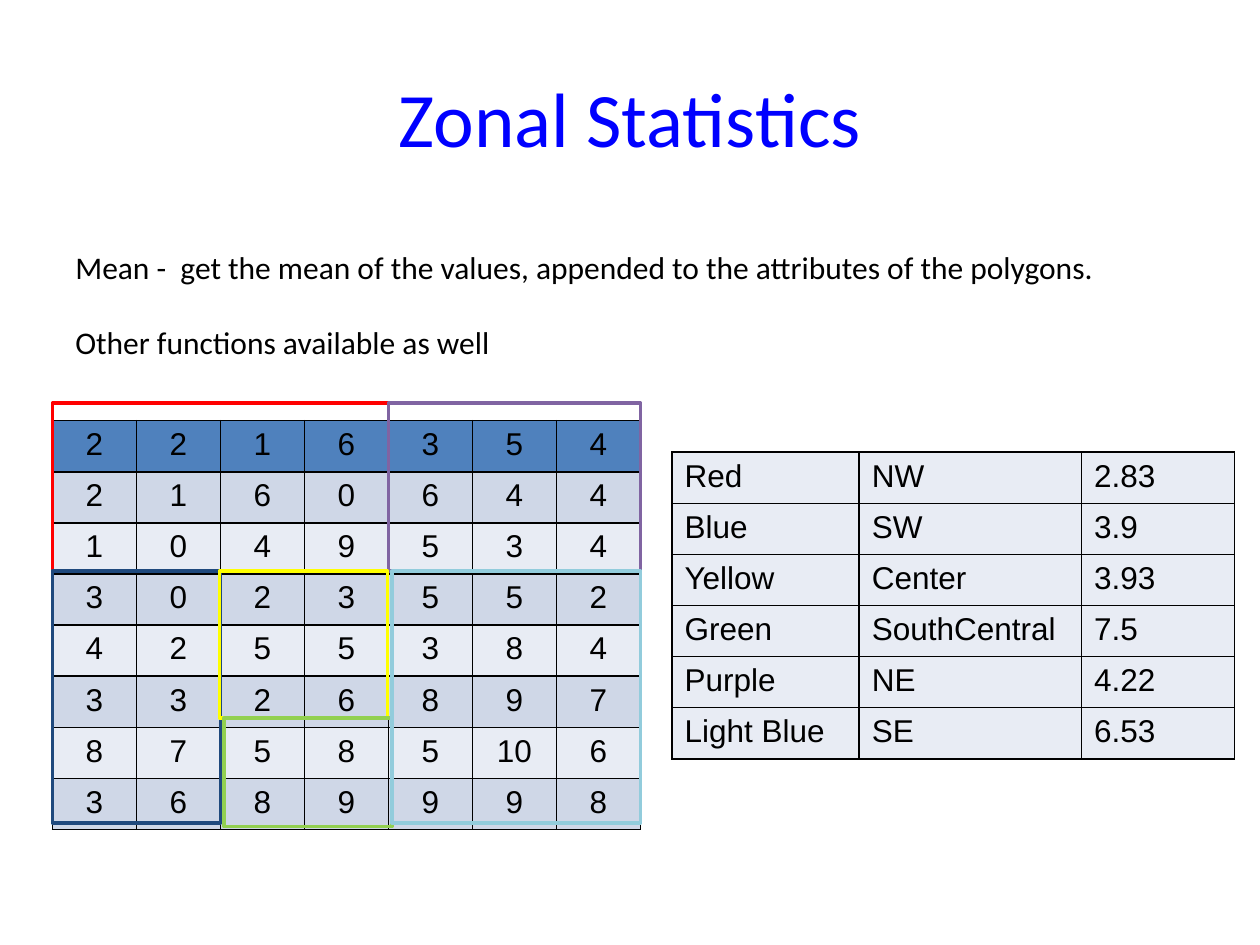
from lxml.etree import SubElement
from pptx import Presentation
from pptx.dml.color import RGBColor
from pptx.enum.shapes import MSO_SHAPE
from pptx.enum.text import MSO_ANCHOR, PP_ALIGN
from pptx.oxml.ns import qn
from pptx.util import Pt

TITLE = "Zonal Statistics"
NOTES = [
    "Mean -  get the mean of the values, appended to the attributes of the polygons.",
    "Other functions available as well",
]
RASTER = [
    [2, 2, 1, 6, 3, 5, 4],
    [2, 1, 6, 0, 6, 4, 4],
    [1, 0, 4, 9, 5, 3, 4],
    [3, 0, 2, 3, 5, 5, 2],
    [4, 2, 5, 5, 3, 8, 4],
    [3, 3, 2, 6, 8, 9, 7],
    [8, 7, 5, 8, 5, 10, 6],
    [3, 6, 8, 9, 9, 9, 8],
]
MEANS = [
    ["Red", "NW", 2.83],
    ["Blue", "SW", 3.9],
    ["Yellow", "Center", 3.93],
    ["Green", "SouthCentral", 7.5],
    ["Purple", "NE", 4.22],
    ["Light Blue", "SE", 6.53],
]
ZONES = [
    ("FF0000", 30, 230.4, 192, 96),
    ("8064A2", 222, 230.4, 144, 96),
    ("1F497D", 30, 326.4, 96, 144),
    ("FFFF00", 125.5, 326.4, 96, 84),
    ("92D050", 128, 410.4, 96, 62),
    ("92CCDC", 224, 326.4, 142, 144),
]
HEADER, DARK, LIGHT = "4F81BD", "CFD7E7", "E8ECF4"
ROW_HEIGHT = 29.2


def color(value):
    return RGBColor.from_string(value)


def format_text(p, font, size, value, align=PP_ALIGN.LEFT):
    p.alignment = align
    for r in p.runs:
        r.font.name = font
        r.font.size = Pt(size)
        r.font.color.rgb = color(value)


def add_borders(cell):
    tc_pr = cell._tc.get_or_add_tcPr()
    for side in ("lnL", "lnR", "lnT", "lnB"):
        ln = SubElement(tc_pr, qn(f"a:{side}"), w=str(Pt(1)))
        fill = SubElement(ln, qn("a:solidFill"))
        SubElement(fill, qn("a:srgbClr"), val="000000")


def add_grid(s, rows, left, top, widths, fills, align):
    frame = s.shapes.add_table(len(rows), len(widths), Pt(left), Pt(top),
                               Pt(sum(widths)), Pt(ROW_HEIGHT * len(rows)))
    table = frame.table
    table.first_row = table.horz_banding = False
    for column, width in zip(table.columns, widths):
        column.width = Pt(width)
    for i, (values, fill) in enumerate(zip(rows, fills)):
        table.rows[i].height = Pt(ROW_HEIGHT)
        for j, value in enumerate(values):
            cell = table.cell(i, j)
            cell.text_frame.text = str(value)
            format_text(cell.text_frame.paragraphs[0], "Arial", 18, "000000", align)
            add_borders(cell)
            cell.fill.solid()
            cell.fill.fore_color.rgb = color(fill)


def add_zone(s, value, left, top, width, height):
    sp = s.shapes.add_shape(MSO_SHAPE.RECTANGLE, Pt(left), Pt(top), Pt(width), Pt(height))
    sp.shadow.inherit = False
    sp.fill.background()
    sp.line.color.rgb = color(value)
    sp.line.width = Pt(2)


def add_notes(s):
    sp = s.shapes.add_textbox(Pt(36), Pt(138.2), Pt(654), Pt(94))
    tf = sp.text_frame
    tf.word_wrap = True
    tf.text = "\n".join(NOTES)
    for p in tf.paragraphs:
        format_text(p, "Calibri", 18, "000000")
    tf.paragraphs[-1].space_before = Pt(21.5)


def main():
    prs = Presentation()
    prs.slide_width, prs.slide_height = Pt(720), Pt(540)
    s = prs.slides.add_slide(prs.slide_layouts[5])

    title = s.shapes.title
    title.left, title.top, title.width, title.height = Pt(36), Pt(21.6), Pt(648), Pt(90)
    tf = title.text_frame
    tf.text = TITLE
    tf.vertical_anchor = MSO_ANCHOR.MIDDLE
    format_text(tf.paragraphs[0], "Calibri", 44, "0000FF", PP_ALIGN.CENTER)

    bands = [HEADER] + [(LIGHT, DARK)[i % 2] for i in range(1, len(RASTER))]
    add_grid(s, RASTER, 30, 240.4, [48] * 7, bands, PP_ALIGN.CENTER)
    for zone in ZONES:
        add_zone(s, *zone)
    add_grid(s, MEANS, 384, 258.4, [107, 127, 87.5], [LIGHT] * len(MEANS), PP_ALIGN.LEFT)
    add_notes(s)
    prs.save("out.pptx")


if __name__ == "__main__":
    main()
